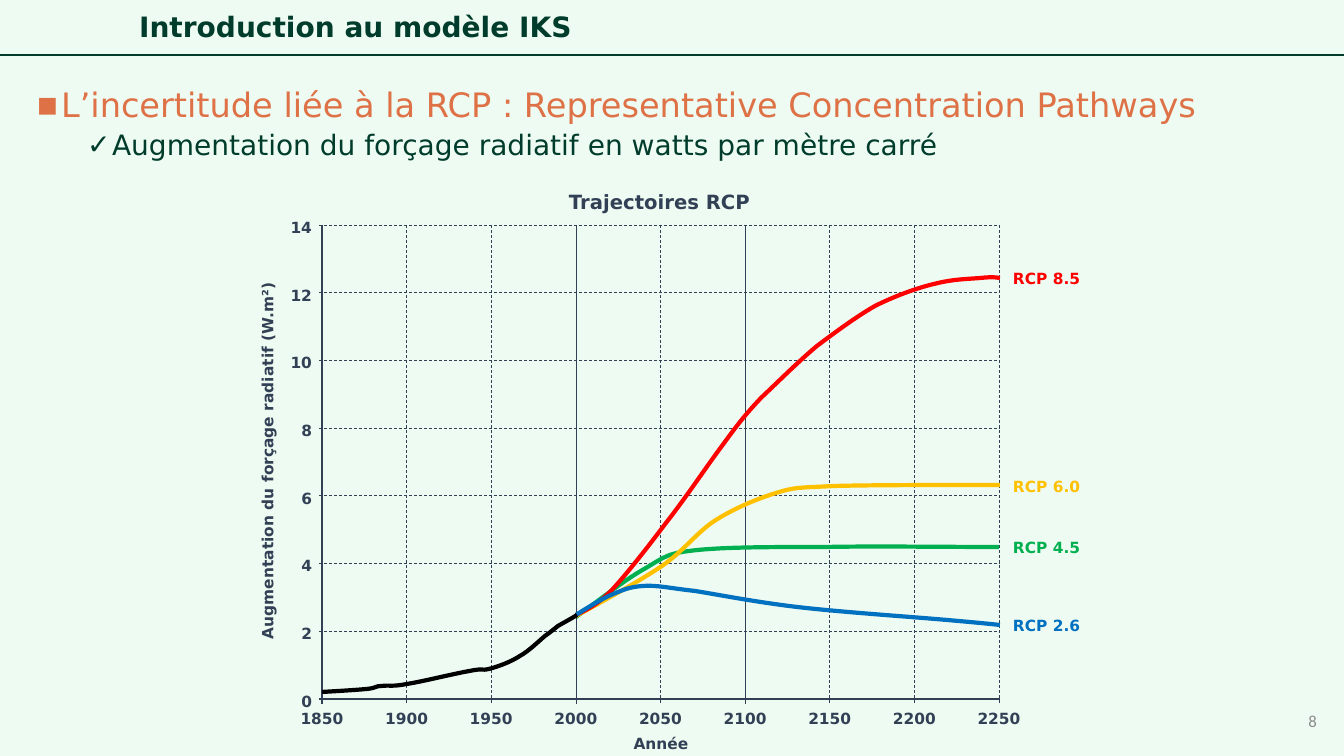
from lxml.etree import SubElement
from pptx import Presentation
from pptx.dml.color import RGBColor
from pptx.enum.dml import MSO_LINE
from pptx.enum.shapes import MSO_CONNECTOR
from pptx.enum.text import MSO_ANCHOR, MSO_AUTO_SIZE, PP_ALIGN
from pptx.oxml.ns import qn
from pptx.util import Pt

SCALE = 914400 / 100.8
COLORS = {
    "paper": "EEFBF2", "forest": "003C2B", "accent": "DE7246", "slate": "324055", "gray": "8C8C8C",
    "green": "00B050", "yellow": "FFC000", "red": "FF0000", "blue": "0070C0", "black": "000000",
}
LEFT, RIGHT, TOP, BOTTOM = 322, 999, 225, 699
YEARS = range(1850, 2251, 50)
FORCINGS = range(0, 15, 2)
CURVES = {
    "green": [(576, 617), (602, 598), (626, 579), (646, 568), (666, 556), (668, 553), (698, 550),
              (728, 547), (774, 547), (825, 547), (875, 546), (937, 547), (999, 547)],
    "yellow": [(576, 616), (607, 599), (638, 582), (662, 566), (685, 550), (697, 532), (716, 520),
               (735, 508), (757, 499), (776, 493), (796, 487), (796, 488), (834, 486),
               (871, 485), (935, 485), (1000, 485)],
    "red": [(576, 615), (586, 610), (596, 606), (611, 591), (626, 575), (648, 547), (666, 523),
            (685, 499), (707, 466), (722, 446), (738, 424), (745, 415), (761, 398),
            (778, 382), (799, 361), (817, 346), (837, 331), (856, 317), (875, 306),
            (895, 296), (917, 288), (934, 284), (953, 279), (969, 279), (980, 278),
            (990, 277), (995, 277), (1000, 278)],
    "blue": [(576, 615), (587, 608), (600, 600), (611, 595), (623, 590), (629, 587), (643, 586),
             (657, 585), (668, 588), (695, 591), (720, 595), (755, 602), (797, 607),
             (839, 612), (913, 617), (947, 620), (981, 623), (990, 624), (1000, 625)],
    "black": [(322, 692), (340, 691), (357, 690), (367, 689), (377, 688), (375, 686), (382, 686),
              (389, 685), (392, 687), (407, 684), (421, 682), (457, 673), (470, 671),
              (484, 668), (481, 671), (489, 669), (497, 667), (511, 662), (520, 656),
              (529, 651), (539, 641), (545, 636), (552, 631), (553, 630), (558, 626),
              (563, 623), (571, 619), (577, 615)],
}
CURVE_LABELS = [("RCP 2.6", 611, "blue"), ("RCP 4.5", 533, "green"),
                ("RCP 6.0", 472, "yellow"), ("RCP 8.5", 264, "red")]


def emu(pixels):
    """Turn pixels into EMU."""
    return round(pixels * SCALE)


class Painter:
    """Holds the style and the current slide and draws its elements."""

    def __init__(self, page):
        """Take the page and paint its background."""
        self.page = page
        self.shapes = page.shapes
        page.background.fill.solid()
        page.background.fill.fore_color.rgb = self.color("paper")

    def color(self, name):
        """Look up a named colour."""
        return RGBColor.from_string(COLORS[name])

    def start_group(self):
        """Draw the following elements in a new group."""
        self.shapes = self.page.shapes.add_group_shape().shapes

    def place(self, shape, box):
        """Move a shape to a left, top, width, height box."""
        for name, pixels in zip(("left", "top", "width", "height"), box):
            setattr(shape, name, emu(pixels))

    def add_span(self, para, text, size, color, bold=False, font="DejaVu Sans"):
        """Add one formatted span to a paragraph."""
        span = para.add_run()
        span.text = text
        for name, value in {"size": Pt(size), "bold": bold, "name": font}.items():
            setattr(span.font, name, value)
        span.font.color.rgb = self.color(color)

    def title(self, text, box):
        """Fill the title placeholder."""
        holder = self.page.shapes.title
        self.place(holder, box)
        frame = holder.text_frame
        for name, value in {"vertical_anchor": MSO_ANCHOR.MIDDLE, "auto_size": MSO_AUTO_SIZE.NONE}.items():
            setattr(frame, name, value)
        para = frame.paragraphs[0]
        for name, value in {"alignment": PP_ALIGN.LEFT, "line_spacing": 0.9}.items():
            setattr(para, name, value)
        self.add_span(para, text, 20, "forest", bold=True)

    def bullets(self, items, box):
        """Fill the body placeholder with a bulleted list."""
        holder = self.page.placeholders[1]
        self.place(holder, box)
        frame = holder.text_frame
        frame.auto_size = MSO_AUTO_SIZE.NONE
        for index, (text, mark, margin, before, size, color) in enumerate(items):
            para = frame.add_paragraph() if index else frame.paragraphs[0]
            formats = {"level": index, "line_spacing": 0.9, "space_before": Pt(before)}
            for name, value in formats.items():
                setattr(para, name, value)
            properties = para._p.get_or_add_pPr()
            properties.set("marL", str(emu(margin)))
            properties.set("indent", str(emu(-25)))
            SubElement(properties, qn("a:buFont"), typeface="DejaVu Sans")
            SubElement(properties, qn("a:buChar"), char=mark)
            self.add_span(para, text, size, color)

    def label(self, text, box, align=PP_ALIGN.CENTER, size=11, color="slate", bold=True,
              font="DejaVu Sans", anchor=MSO_ANCHOR.TOP, rotation=0):
        """Add a one-line text box."""
        shape = self.shapes.add_textbox(*map(emu, box))
        shape.rotation = rotation
        frame = shape.text_frame
        for name, value in {"word_wrap": False, "vertical_anchor": anchor}.items():
            setattr(frame, name, value)
        frame.paragraphs[0].alignment = align
        self.add_span(frame.paragraphs[0], text, size, color, bold, font)

    def line(self, start, end, color="slate", width=0.5, dash=None):
        """Add a straight line."""
        shape = self.shapes.add_connector(MSO_CONNECTOR.STRAIGHT, *map(emu, start + end))
        for name, value in {"width": Pt(width), "dash_style": dash}.items():
            setattr(shape.line, name, value)
        shape.line.color.rgb = self.color(color)
        SubElement(shape.element.spPr, qn("a:effectLst"))

    def curve(self, points, color):
        """Add an open curve of cubic Bézier segments."""
        builder = self.shapes.build_freeform(*points[0], scale=SCALE)
        builder.add_line_segments(points[1:], close=False)
        shape = builder.convert_to_shape()
        steps = shape.element.xpath(".//a:lnTo")
        for first, second, third in zip(steps[::3], steps[1::3], steps[2::3]):
            first.tag = qn("a:cubicBezTo")
            for step in (second, third):
                first.append(step[0])
                step.getparent().remove(step)
        shape.shadow.inherit = False
        shape.fill.background()
        shape.line.width = Pt(3)
        shape.line.color.rgb = self.color(color)


def draw_grid(painter):
    """Draw the grid lines and the axis values."""
    for index, year in enumerate(YEARS):
        x = LEFT + (RIGHT - LEFT) * index / (len(YEARS) - 1)
        painter.line((x, TOP), (x, BOTTOM + 5), width=0.5 if index else 1.5,
                     dash=None if year in (1850, 2000, 2100) else MSO_LINE.DASH)
        painter.label(str(year), (x - 32, 704, 64, 29))
    for index, forcing in enumerate(FORCINGS):
        y = BOTTOM - (BOTTOM - TOP) * index / (len(FORCINGS) - 1)
        painter.line((LEFT - 3, y), (RIGHT + 1, y), width=0.5 if index else 1.5,
                     dash=MSO_LINE.DASH if index else None)
        width = 42 if forcing >= 10 else 31
        painter.label(str(forcing), (LEFT - width, y - 12, width, 29), PP_ALIGN.RIGHT)


def main():
    """Build the slide and save the deck."""
    deck = Presentation()
    deck.slide_width, deck.slide_height = emu(1344), emu(756)
    painter = Painter(deck.slides.add_slide(deck.slide_layouts[1]))
    painter.line((0, 55), (1344, 55), "forest", 1.5)
    painter.title("Introduction au modèle IKS", (129, 8, 1159, 40))
    painter.bullets([
        ("L’incertitude liée à la RCP : Representative Concentration Pathways", "▪", 25, 0, 24, "accent"),
        ("Augmentation du forçage radiatif en watts par mètre carré", "✓", 76, 5, 20, "forest"),
    ], (26, 83, 1317, 673))
    painter.label("8", (1025, 701, 302, 40), PP_ALIGN.RIGHT, 12, "gray", False, "Calibri", MSO_ANCHOR.MIDDLE)

    painter.start_group()
    draw_grid(painter)
    painter.label("Augmentation du forçage radiatif (W.m²)", (76, 450, 383, 29), PP_ALIGN.RIGHT, rotation=270)
    for color, points in CURVES.items():
        painter.curve(points, color)
    for text, top, color in CURVE_LABELS:
        painter.label(text, (1003, top, 89, 29), PP_ALIGN.LEFT, color=color)
    painter.label("Année", (623, 729, 76, 29))
    painter.label("Trajectoires RCP", (557, 185, 205, 34), size=14)
    deck.save("out.pptx")


if __name__ == "__main__":
    main()
